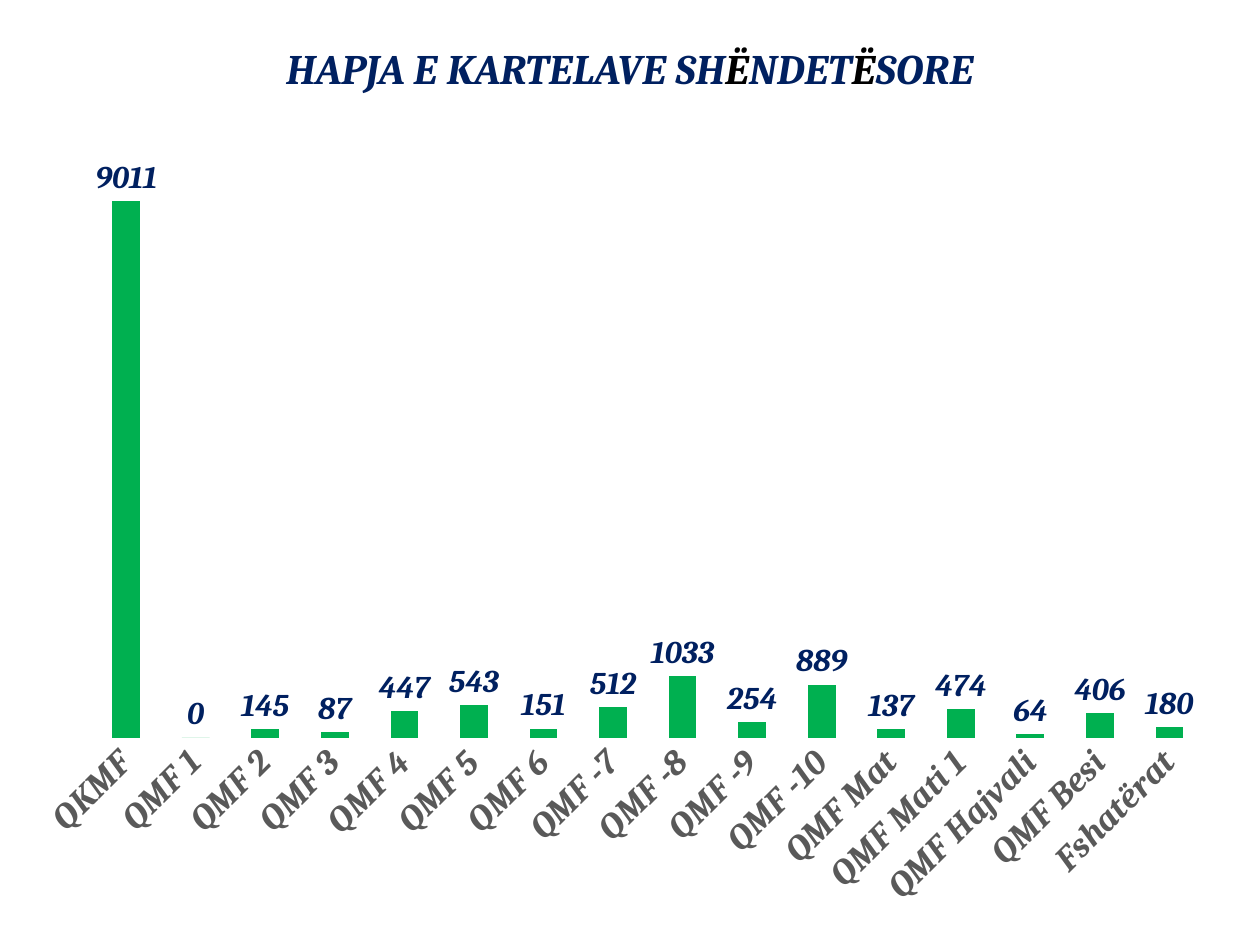
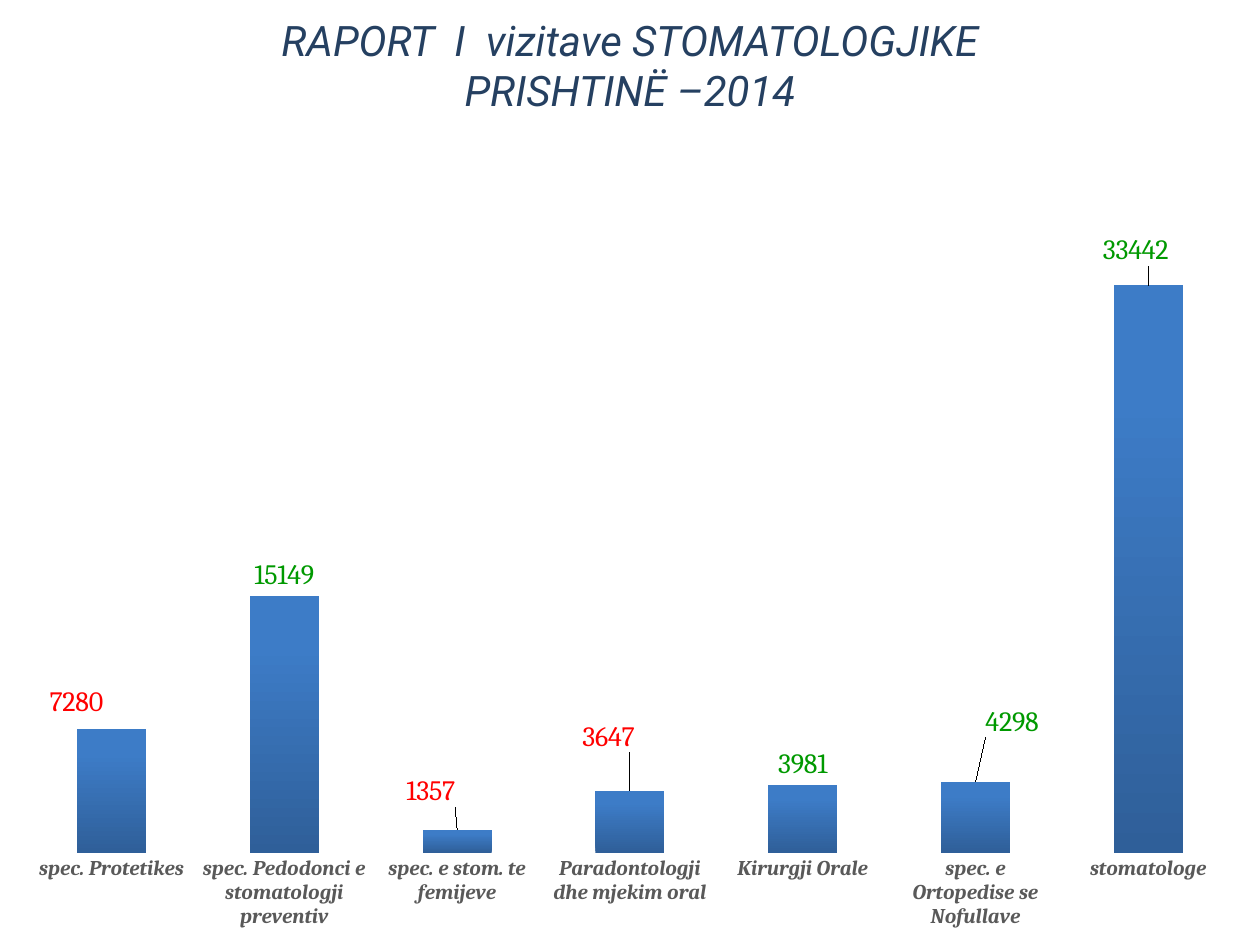
from lxml import etree
from pptx import Presentation
from pptx.chart.data import CategoryChartData
from pptx.dml.color import RGBColor
from pptx.enum.chart import XL_CHART_TYPE as ChartType
from pptx.enum.chart import XL_LABEL_POSITION as LabelPosition
from pptx.enum.chart import XL_TICK_MARK as TickMark
from pptx.enum.text import MSO_ANCHOR as Anchor
from pptx.enum.text import PP_ALIGN as Align
from pptx.oxml.ns import qn
from pptx.util import Inches, Pt

WIDTH, HEIGHT = Inches(10), Inches(7.5)
TITLE_ONLY = 5
SERIF, SANS, BASE_FONT = "Cambria", "Roboto", "Calibri"

BLACK = RGBColor(0x00, 0x00, 0x00)
NAVY = RGBColor(0x00, 0x20, 0x60)
SLATE = RGBColor(0x25, 0x40, 0x61)
GRAY = RGBColor(0x59, 0x59, 0x59)
BAR_GREEN = RGBColor(0x00, 0xB0, 0x50)
BAR_DARK = RGBColor(0x2F, 0x5F, 0x99)
BAR_LIGHT = RGBColor(0x3D, 0x7C, 0xC7)
LABEL_RED = RGBColor(0xFF, 0x00, 0x00)
LABEL_GREEN = RGBColor(0x00, 0x99, 0x00)

CARD_OPENINGS = {
    "QKMF": 9011, "QMF 1": 0, "QMF 2": 145, "QMF 3": 87,
    "QMF 4": 447, "QMF 5": 543, "QMF 6": 151, "QMF -7": 512,
    "QMF -8": 1033, "QMF -9": 254, "QMF -10": 889, "QMF Mat": 137,
    "QMF Mati 1": 474, "QMF Hajvali": 64, "QMF Besi": 406, "Fshatërat": 180,
}
DENTAL_VISITS = {
    "spec. Protetikes": 7280,
    "spec. Pedodonci e stomatologji preventiv": 15149,
    "spec. e stom. te femijeve": 1357,
    "Paradontologji dhe mjekim oral": 3647,
    "Kirurgji Orale": 3981,
    "spec. e Ortopedise se Nofullave": 4172,
    "stomatologe": 33442,
}
VISIT_LABELS = [
    (LABEL_RED, -0.028, -0.008, None),
    (LABEL_GREEN, 0, 0, None),
    (LABEL_RED, -0.021, -0.022, None),
    (LABEL_RED, -0.017, -0.042, None),
    (LABEL_GREEN, 0, 0, None),
    (LABEL_GREEN, 0.029, -0.05, "4298"),
    (LABEL_GREEN, -0.01, -0.018, None),
]


def style_font(font, name, size, color, bold=False, italic=False):
    font.name, font.size = name, Pt(size)
    font.bold, font.italic = bold, italic
    font.color.rgb = color


def add_title_slide(presentation, lines, font_name, bold, height, bottom_inset):
    slide = presentation.slides.add_slide(presentation.slide_layouts[TITLE_ONLY])
    title = slide.shapes.title
    title.left, title.top = Inches(0.69), Inches(0.4)
    title.width, title.height = Inches(8.62), Inches(height)
    frame = title.text_frame
    frame.vertical_anchor = Anchor.MIDDLE
    frame.margin_bottom = Inches(bottom_inset)
    for index, line in enumerate(lines):
        paragraph = frame.add_paragraph() if index else frame.paragraphs[0]
        paragraph.alignment = Align.CENTER
        for text, color in line:
            run = paragraph.add_run()
            run.text = text
            style_font(run.font, font_name, 24, color, bold, italic=True)
    return slide


def manual_layout(**values):
    layout = etree.Element(qn("c:layout"))
    manual = etree.SubElement(layout, qn("c:manualLayout"))
    for tag, value in values.items():
        etree.SubElement(manual, qn(f"c:{tag}")).set("val", str(value))
    return layout


def place_plot(chart, left, top, width, height):
    plot_area = chart.plots[0]._element.getparent()
    for layout in plot_area.findall(qn("c:layout")):
        plot_area.remove(layout)
    plot_area.insert(0, manual_layout(
        layoutTarget="inner", xMode="edge", yMode="edge",
        x=left, y=top, w=width, h=height))


def add_column_chart(slide, values, box, plot_box, axis_top, category_size, rotation):
    data = CategoryChartData()
    data.categories = list(values)
    data.add_series("Series 1", list(values.values()))
    left, top, width, height = (Inches(length) for length in box)
    chart = slide.shapes.add_chart(
        ChartType.COLUMN_CLUSTERED, left, top, width, height, data).chart
    chart.has_title = chart.has_legend = False
    style_font(chart.font, BASE_FONT, 10, BLACK)
    place_plot(chart, *plot_box)

    value_axis = chart.value_axis
    value_axis.visible = value_axis.has_major_gridlines = False
    value_axis.minimum_scale, value_axis.maximum_scale = 0, axis_top

    category_axis = chart.category_axis
    category_axis.major_tick_mark = TickMark.NONE
    category_axis.format.line.fill.background()
    labels = category_axis.tick_labels
    style_font(labels.font, SERIF, category_size, GRAY, bold=True, italic=True)
    body = category_axis._element.find(qn("c:txPr")).find(qn("a:bodyPr"))
    body.set("rot", str(rotation * 60000))
    body.set("vert", "horz")

    plot = chart.plots[0]
    plot.gap_width = 150
    plot.vary_by_categories = False
    return plot


def show_values(plot, size, color, bold, italic):
    plot.has_data_labels = True
    labels = plot.data_labels
    labels.show_value = True
    labels.number_format, labels.number_format_is_linked = "0", False
    labels.position = LabelPosition.OUTSIDE_END
    style_font(labels.font, SERIF, size, color, bold, italic)


def style_point_label(point, color, shift_x, shift_y, text):
    label = point.data_label
    if text:
        label.text_frame.text = text
        font = label.text_frame.paragraphs[0].runs[0].font
    else:
        font = label.font
    style_font(font, SERIF, 16, color)
    label.position = LabelPosition.OUTSIDE_END
    if shift_x or shift_y:
        element = label._dLbl
        for layout in element.findall(qn("c:layout")):
            element.remove(layout)
        element.insert(1, manual_layout(x=shift_x, y=shift_y))


def add_card_openings(presentation):
    parts = ["HAPJA E KARTELAVE SH", "Ë", "NDET", "Ë", "SORE"]
    line = [(part, BLACK if part == "Ë" else NAVY) for part in parts]
    slide = add_title_slide(presentation, [line], SERIF, True, 0.27, 0.05)
    plot = add_column_chart(
        slide, CARD_OPENINGS, (0.17, 1, 9.58, 6.33),
        (0.058, 0.02, 0.922, 0.747), 10000, 20, -45)
    show_values(plot, 18, NAVY, bold=True, italic=True)
    fill = plot.series[0].format.fill
    fill.solid()
    fill.fore_color.rgb = BAR_GREEN


def add_dental_visits(presentation):
    lines = [[("RAPORT  I  vizitave STOMATOLOGJIKE", SLATE)],
             [("PRISHTINË –2014", SLATE)]]
    slide = add_title_slide(presentation, lines, SANS, False, 0.6, 0.42)
    plot = add_column_chart(
        slide, DENTAL_VISITS, (0, 1.25, 10, 6.25),
        (0.02, 0.021, 0.96, 0.862), 40000, 12, 0)
    show_values(plot, 16, LABEL_GREEN, bold=False, italic=False)
    series = plot.series[0]
    fill = series.format.fill
    fill.gradient()
    fill.gradient_angle = 90
    stops = zip(fill.gradient_stops, (0, 0.8), (BAR_DARK, BAR_LIGHT))
    for stop, position, color in stops:
        stop.position = position
        stop.color.rgb = color
    for index, label in enumerate(VISIT_LABELS):
        style_point_label(series.points[index], *label)


def main():
    presentation = Presentation()
    presentation.slide_width, presentation.slide_height = WIDTH, HEIGHT
    add_card_openings(presentation)
    add_dental_visits(presentation)
    presentation.save("out.pptx")


if __name__ == "__main__":
    main()
